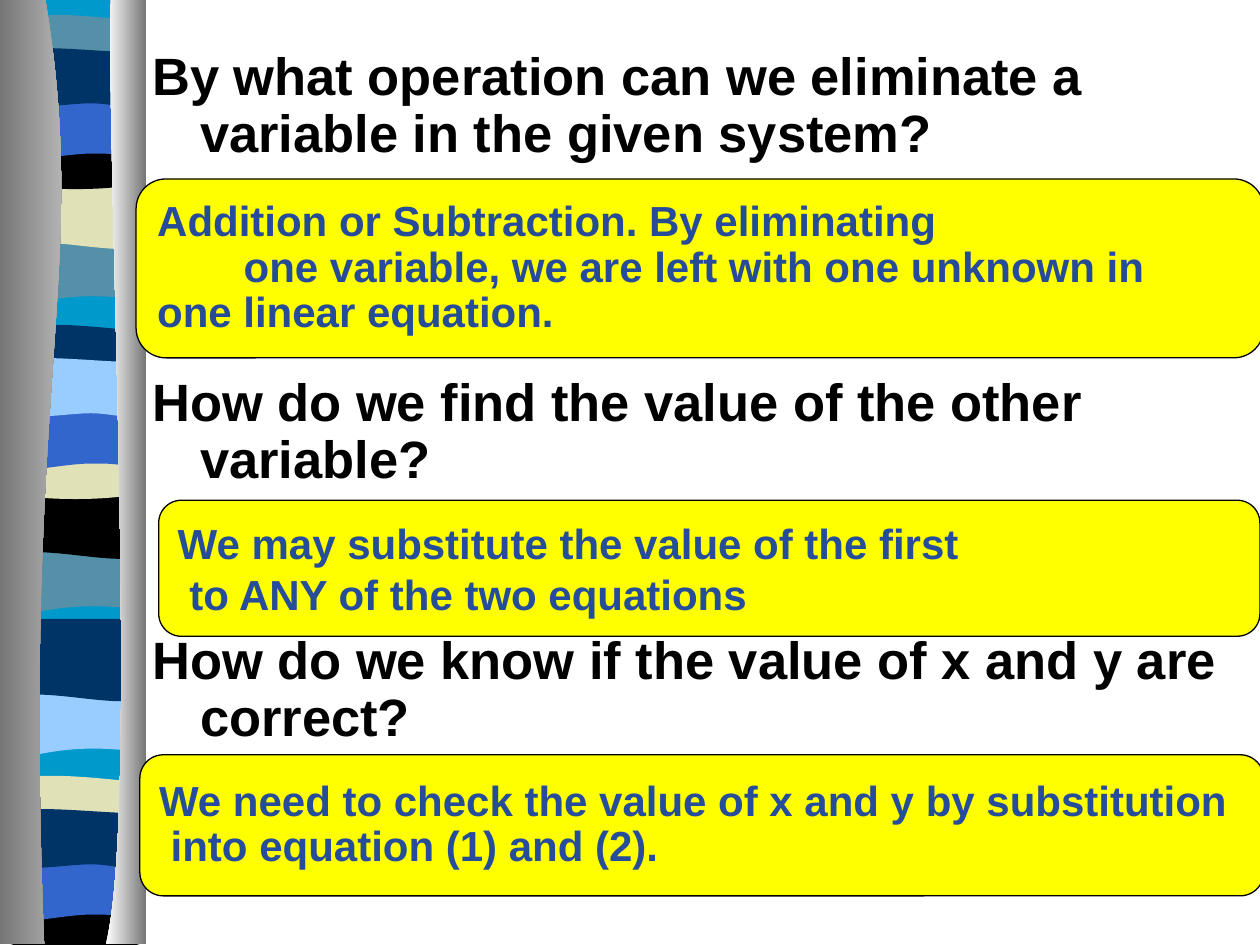
from pptx import Presentation
from pptx.util import Inches, Pt
from pptx.dml.color import RGBColor
from pptx.enum.shapes import MSO_SHAPE as Shape
from pptx.enum.text import MSO_ANCHOR as Anchor, PP_ALIGN as Align
from pptx.oxml.ns import qn
from lxml import etree

deck = Presentation()
deck.slide_width, deck.slide_height = Inches(10), Inches(7.5)
slide = deck.slides.add_slide(deck.slide_layouts[6])
shapes = slide.shapes


def rgb(code):
    return RGBColor.from_string(code)


def outline(start, steps, shift=0, grow=1):
    """Closed shape: a step of 2 numbers is a line, one of 6 is a Bezier curve."""
    pts = [start]
    for step in steps:
        pts += zip(step[::2], step[1::2])
    ys = [y for x, y in pts]
    mid = (min(ys) + max(ys)) / 2
    pts = [(Inches(x), Inches(mid + grow * (y - mid) + shift)) for x, y in pts]
    form = shapes.build_freeform(*pts[0], scale=1.0)
    form.add_line_segments(pts[1:], close=True)
    shape = form.convert_to_shape()
    # Turn each run of three points into one curve
    lines = shape._element.findall(".//" + qn("a:lnTo"))
    for step in steps:
        part, lines = lines[:len(step) // 2], lines[len(step) // 2:]
        if len(part) == 3:
            curve = etree.Element(qn("a:cubicBezTo"))
            part[0].addprevious(curve)
            for line in part:
                curve.append(line[0])
                line.getparent().remove(line)
    shape.shadow.inherit = False
    shape.line.fill.background()
    return shape


# Wavy bands: start, steps, colour in each of the three repeats
L, R = 0.05, 1.14
bands = [
    ((R, 1.85), [(R, 2.32), (0.39, 2.24, 0.24, 2.4, L, 2.32), (L, 1.85)],
     ("5490A8", "5490A8", "99CCFF")),
    ((R, 1.41), [(R, 1.88), (0.96, 1.96, 0.39, 1.82, L, 1.88), (L, 1.41)],
     ("E1E1B7", "000000", "003366")),
    ((R, 0.21), [(R, 0.45), (0.96, 0.5, 0.24, 0.5, L, 0.45), (L, 0.21),
                 (0.12, 0.16, 0.29, 0.17, 0.47, 0.17),
                 (0.65, 0.17, 1, 0.2, R, 0.21)],
     ("5490A8", "003366", "E1E1B7")),
    ((R, 1.08), [(R, 1.4), (0.96, 1.46, 0.24, 1.46, L, 1.4), (L, 1.08),
                 (0.72, 1.13, 0.91, 1.08, R, 1.08)],
     ("000000", "E1E1B7", "000000")),
    ((R, 0.74), [(R, 1.21), (0.97, 1.16, 0.9, 1.16, 0.72, 1.16),
                 (0.54, 1.16, 0.22, 1.21, L, 1.21), (L, 0.74)],
     ("3366CC", "3366CC", "3366CC")),
    ((R, 0.46), [(R, 0.77), (1.07, 0.82, 0.9, 0.77, 0.72, 0.77),
                 (0.54, 0.77, 0.17, 0.82, L, 0.77), (L, 0.46),
                 (0.21, 0.41, 0.79, 0.46, 0.97, 0.46)],
     ("003366", "99CCFF", "003366")),
]
base = outline((R, 0), [(R, 7.47), (L, 7.47), (L, 0)])
base.fill.solid()
base.fill.fore_color.rgb = rgb("0099CC")
for n in range(3):
    for i, (start, steps, tints) in enumerate(bands):
        last = 3.59 if i < 2 else 6.04
        band = outline(start, steps, (0, 2.46, last)[n], 1.32)
        band.fill.solid()
        band.fill.fore_color.rgb = rgb(tints[n])

# Grey curtains on both sides of the bands
curtains = [
    ((0.36, 0), [(0.72, 2.16, 0.17, 2.96, 0.35, 7.49), (0, 7.49), (0, 0)],
     ("767676", "CFCFCF")),
    ((0.88, 0), [(0.84, 1.25, 1.11, 6.46, 0.84, 7.49), (1.16, 7.49), (1.16, 0)],
     ("FFFFFF", "767676")),
]
for start, steps, tints in curtains:
    fill = outline(start, steps).fill
    fill.gradient()
    fill.gradient_angle = 0
    for stop, tint in zip(fill.gradient_stops, tints):
        stop.color.rgb = rgb(tint)

# Answers: place, line spacing, colour, lines
answers = [
    ((1.11, 5.99, 8.92, 1.12), 0.9, "264D99",
     ["We need to check the value of x and y by substitution",
      " into equation (1) and (2)."]),
    ((1.26, 3.97, 8.74, 1.08), None, "264D99",
     ["We may substitute the value of the first",
      " to ANY of the two equations"]),
    ((1.08, 1.42, 8.95, 1.42), 0.9, "264C99",
     ["Addition or Subtraction. By eliminating",
      "one variable, we are left with one unknown in ",
      "one linear equation."]),
]
for place, gap, tint, lines in answers:
    box = shapes.add_shape(Shape.ROUNDED_RECTANGLE, *map(Inches, place))
    box.shadow.inherit = False
    box.fill.solid()
    box.fill.fore_color.rgb = rgb("FFFF00")
    box.line.color.rgb = rgb("000000")
    box.line.width = Pt(0.75)
    frame = box.text_frame
    frame.word_wrap = False
    frame.vertical_anchor = Anchor.MIDDLE
    for i, line in enumerate(lines):
        para = frame.add_paragraph() if i else frame.paragraphs[0]
        para.alignment = Align.CENTER if line.startswith("one var") else Align.LEFT
        para.line_spacing = gap
        run = para.add_run()
        run.text = line
        run.font.name, run.font.size, run.font.bold = "Arial", Pt(24), True
        run.font.color.rgb = rgb(tint)

# Questions with a hanging indent, spaced to leave room for the answers
asks = [
    (0, "By what operation can we eliminate a variable in the given system?"),
    (121.5, "How do we find the value of the other variable?"),
    (82.5, "How do we know if the value of x and y are correct?"),
]
box = shapes.add_textbox(Inches(1.11), Inches(0.35), Inches(8.68), Inches(4.5))
frame = box.text_frame
frame.word_wrap = True
for i, (gap, ask) in enumerate(asks):
    para = frame.add_paragraph() if i else frame.paragraphs[0]
    para.line_spacing = 0.9
    para.space_before = Pt(gap)
    props = para._p.get_or_add_pPr()
    props.set("marL", str(Inches(0.38)))
    props.set("indent", str(Inches(-0.38)))
    run = para.add_run()
    run.text = ask
    run.font.name, run.font.size, run.font.bold = "Arial", Pt(30), True
    run.font.color.rgb = rgb("000000")

deck.save("out.pptx")
